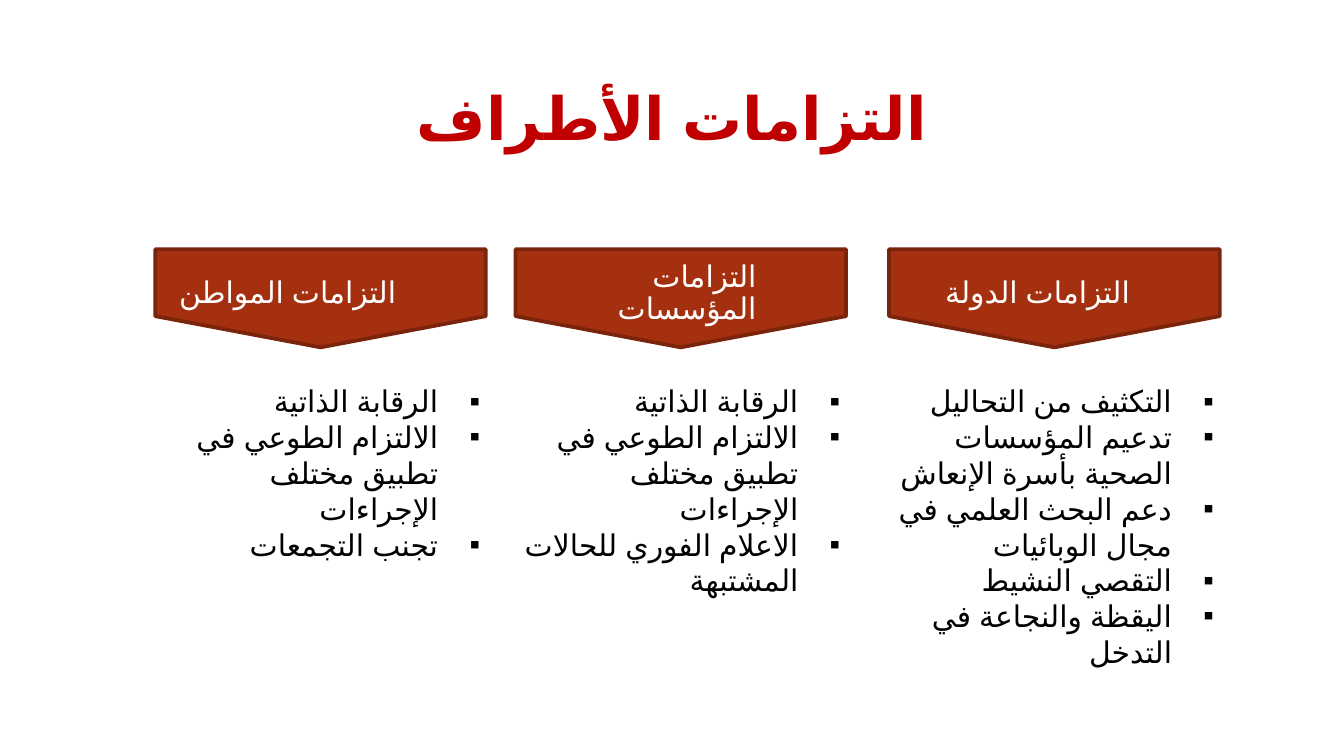
"""Build a slide listing the commitments of the state, institutions and citizens."""
from lxml.etree import SubElement
from pptx import Presentation
from pptx.dml.color import RGBColor
from pptx.enum.lang import MSO_LANGUAGE_ID as Language
from pptx.enum.shapes import MSO_SHAPE
from pptx.enum.text import MSO_ANCHOR as Anchor, MSO_AUTO_SIZE as AutoSize, PP_ALIGN as Align
from pptx.oxml.ns import qn
from pptx.util import Inches, Pt


def color(value):
    return RGBColor.from_string(value)


def add_text(lines, left, top, width, height, size=16, font="Arial", fill="000000",
             bold=False, align=Align.RIGHT, anchor=Anchor.TOP, inset=None,
             spacing=None, rtl=True, bullet=None, grow=False):
    box = page.shapes.add_textbox(Inches(left), Inches(top), Inches(width), Inches(height))
    frame = box.text_frame
    frame.word_wrap = True
    frame.auto_size = AutoSize.SHAPE_TO_FIT_TEXT if grow else AutoSize.NONE
    frame.vertical_anchor = anchor
    if inset is not None:
        frame.margin_left = frame.margin_right = Inches(inset)
        frame.margin_top = frame.margin_bottom = Inches(inset)
    for index, line in enumerate(lines):
        para = frame.add_paragraph() if index else frame.paragraphs[0]
        para.alignment = align
        if spacing:
            para.line_spacing = spacing
        props = para._p.get_or_add_pPr()
        if rtl:
            props.set("rtl", "1")
        if bullet:
            props.set("marL", str(Inches(0.31)))
            props.set("indent", str(Inches(-0.31)))
            tint = SubElement(props, qn("a:buClr"))
            SubElement(tint, qn("a:srgbClr"), val=fill)
            SubElement(props, qn("a:buFont"), typeface="Arial")
            SubElement(props, qn("a:buChar"), char=bullet)
        span = para.add_run()
        span.text = line
        span.font.size = Pt(size)
        span.font.name = font
        span.font.bold = bold
        span.font.color.rgb = color(fill)
        span.font.language_id = Language.ARABIC_ALGERIA
        SubElement(span._r.get_or_add_rPr(), qn("a:cs"), typeface=font)


deck = Presentation()
deck.slide_width, deck.slide_height = Inches(10), Inches(10) * 9 // 16
page = deck.slides.add_slide(deck.slide_layouts[6])

add_text(["التزامات الأطراف"], 0.34, 0.5, 9.32, 0.68, size=32, font="TeX Gyre Schola",
         fill="C00000", bold=True, align=Align.CENTER, inset=0.1, rtl=False)

shared = ["الرقابة الذاتية", "الالتزام الطوعي في تطبيق مختلف الإجراءات"]
columns = [
    (6.55, 1.99, "التزامات الدولة", [
        "التكثيف من التحاليل",
        "تدعيم المؤسسات الصحية بأسرة الإنعاش",
        "دعم البحث العلمي في مجال الوبائيات",
        "التقصي النشيط",
        "اليقظة والنجاعة في التدخل",
    ]),
    (3.77, 1.45, "التزامات المؤسسات", shared + ["الاعلام الفوري للحالات المشتبهة"]),
    (1.09, 1.45, "التزامات المواطن", shared + ["تجنب التجمعات"]),
]

for left, height, heading, duties in columns:
    banner = page.shapes.add_shape(MSO_SHAPE.PENTAGON, Inches(left + 0.93), Inches(0.99),
                                   Inches(0.73), Inches(2.46))
    banner.rotation = 90
    banner.adjustments[0] = 0.318
    banner.shadow.inherit = False
    banner.fill.solid()
    banner.fill.fore_color.rgb = color("A5300F")
    banner.line.color.rgb = color("7A240B")
    banner.line.width = Pt(2)
    add_text(duties, left, 2.8, 2.58, height, bullet="▪", grow=True)
    add_text([heading], left + 0.15, 1.97, 1.78, 0.43, fill="FFFFFF",
             anchor=Anchor.MIDDLE, inset=0.07, spacing=0.9)

deck.save("out.pptx")
